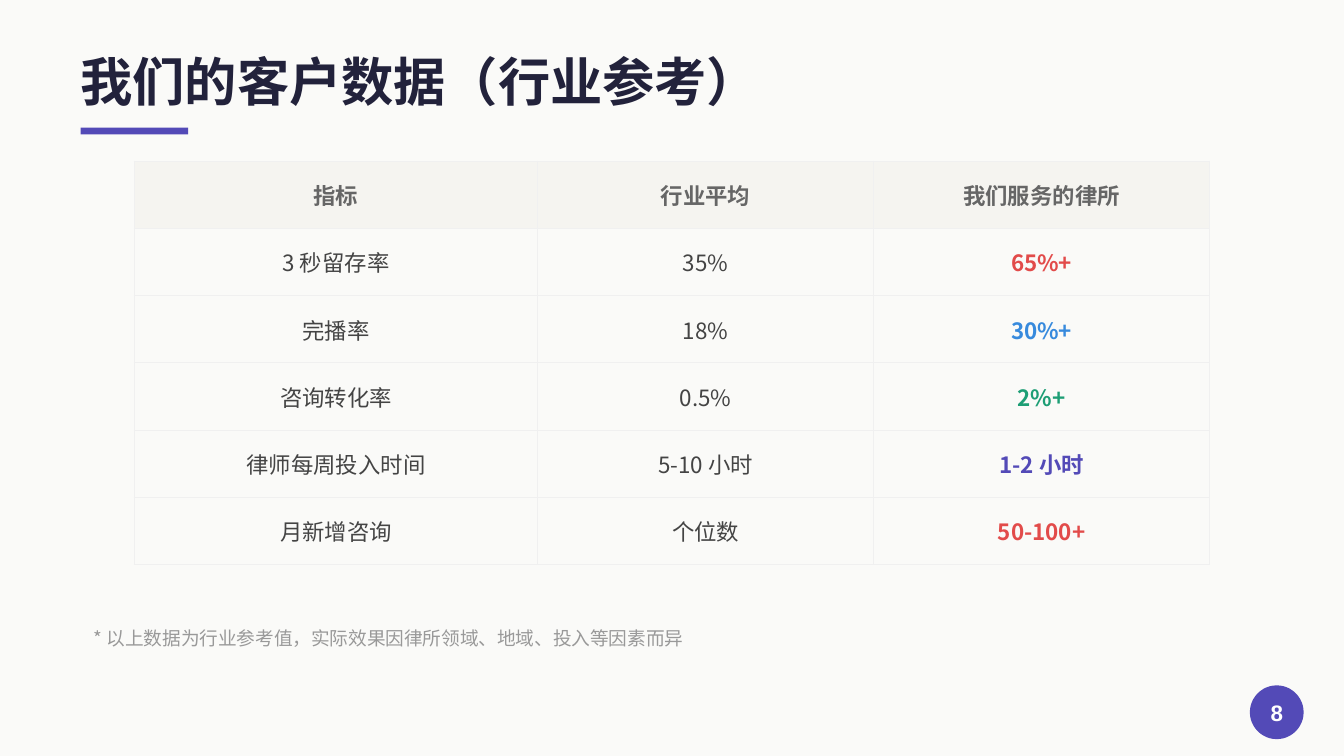
from dataclasses import dataclass
from typing import NamedTuple

from lxml import etree
from pptx import Presentation
from pptx.dml.color import RGBColor
from pptx.enum.shapes import MSO_SHAPE
from pptx.enum.text import MSO_ANCHOR, MSO_AUTO_SIZE, PP_ALIGN
from pptx.oxml.ns import qn
from pptx.util import Pt

RECT, OVAL = MSO_SHAPE.RECTANGLE, MSO_SHAPE.OVAL
MIDDLE = MSO_ANCHOR.MIDDLE
LEFT, CENTER = PP_ALIGN.LEFT, PP_ALIGN.CENTER
NO_FIT = MSO_AUTO_SIZE.NONE


@dataclass(frozen=True)
class Theme:
    paper: str = "FAFAF8"
    ink: str = "22223B"
    accent: str = "534AB7"
    head: str = "666666"
    head_fill: str = "F5F4F0"
    body: str = "444444"
    rule: str = "F0F0F0"
    note: str = "999999"
    white: str = "FFFFFF"
    red: str = "E24B4A"
    blue: str = "378ADD"
    green: str = "1D9E75"
    title_size: float = 28
    text_size: float = 12
    note_size: float = 10
    rule_size: float = 0.5
    font: str = "Noto Sans CJK SC"
    digit: str = "Arial"


class Box(NamedTuple):
    left: float
    top: float
    width: float
    height: float


class Style(NamedTuple):
    size: float
    color: str
    bold: bool
    align: PP_ALIGN
    font: str


class Metric(NamedTuple):
    name: str
    market: str
    ours: str
    color: str


THEME = Theme()
HEADS = ("指标", "行业平均", "我们服务的律所")
METRICS = (
    Metric("3 秒留存率", "35%", "65%+", THEME.red),
    Metric("完播率", "18%", "30%+", THEME.blue),
    Metric("咨询转化率", "0.5%", "2%+", THEME.green),
    Metric("律师每周投入时间", "5-10 小时", "1-2 小时", THEME.accent),
    Metric("月新增咨询", "个位数", "50-100+", THEME.red),
)
WIDTHS = (216, 180, 180)
ROW = 36


def rgb(color: str) -> RGBColor:
    return RGBColor.from_string(color)


def place(box: Box) -> list[Pt]:
    return [Pt(side) for side in box]


def write(frame, text: str, style: Style) -> None:
    frame.text = text
    line = frame.paragraphs[0]
    line.alignment = style.align
    for run in line.runs:
        run.font.name = style.font
        run.font.size = Pt(style.size)
        run.font.bold = style.bold
        run.font.color.rgb = rgb(style.color)
        east = etree.SubElement(run._r.get_or_add_rPr(), qn("a:ea"))
        east.set("typeface", style.font)


def clear(frame) -> None:
    frame.margin_left = frame.margin_right = 0
    frame.margin_top = frame.margin_bottom = 0


def add_title(slide, box: Box, text: str) -> None:
    title = slide.shapes.title
    title.left, title.top, title.width, title.height = place(box)
    frame = title.text_frame
    clear(frame)
    frame.auto_size = NO_FIT
    frame.vertical_anchor = MIDDLE
    write(frame, text, Style(THEME.title_size, THEME.ink, True, LEFT, THEME.font))


def add_solid(slide, kind: MSO_SHAPE, box: Box):
    shape = slide.shapes.add_shape(kind, *place(box))
    shape.shadow.inherit = False
    shape.fill.solid()
    shape.fill.fore_color.rgb = rgb(THEME.accent)
    shape.line.fill.background()
    return shape


def add_badge(slide, box: Box, text: str) -> None:
    frame = add_solid(slide, OVAL, box).text_frame
    clear(frame)
    frame.vertical_anchor = MIDDLE
    write(frame, text, Style(THEME.text_size, THEME.white, True, CENTER, THEME.digit))


def add_note(slide, box: Box, text: str) -> None:
    frame = slide.shapes.add_textbox(*place(box)).text_frame
    frame.word_wrap = True
    frame.vertical_anchor = MIDDLE
    write(frame, text, Style(THEME.note_size, THEME.note, False, LEFT, THEME.font))


def add_rules(cell) -> None:
    props = cell._tc.get_or_add_tcPr()
    for side in ("a:lnL", "a:lnR", "a:lnT", "a:lnB"):
        line = etree.SubElement(props, qn(side), w=str(Pt(THEME.rule_size)))
        fill = etree.SubElement(line, qn("a:solidFill"))
        etree.SubElement(fill, qn("a:srgbClr"), val=THEME.rule)


def fill_cell(cell, text: str, color: str, bold: bool, fill: str | None) -> None:
    add_rules(cell)
    if fill:
        cell.fill.solid()
        cell.fill.fore_color.rgb = rgb(fill)
    else:
        cell.fill.background()
    cell.vertical_anchor = MIDDLE
    write(cell.text_frame, text, Style(THEME.text_size, color, bold, CENTER, THEME.font))


def add_grid(slide, left: float, top: float) -> None:
    count = len(METRICS) + 1
    box = Box(left, top, sum(WIDTHS), count * ROW)
    table = slide.shapes.add_table(count, len(WIDTHS), *place(box)).table
    table.first_row = table.horz_banding = False
    for column, width in zip(table.columns, WIDTHS):
        column.width = Pt(width)
    for cell, text in zip(table.rows[0].cells, HEADS):
        fill_cell(cell, text, THEME.head, True, THEME.head_fill)
    for index, metric in enumerate(METRICS, 1):
        name, market, ours = table.rows[index].cells
        fill_cell(name, metric.name, THEME.body, False, None)
        fill_cell(market, metric.market, THEME.body, False, None)
        fill_cell(ours, metric.ours, metric.color, True, None)


def main() -> None:
    deck = Presentation()
    deck.slide_width, deck.slide_height = Pt(720), Pt(405)
    slide = deck.slides.add_slide(deck.slide_layouts.get_by_name("Title Only"))
    back = slide.background.fill
    back.solid()
    back.fore_color.rgb = rgb(THEME.paper)
    add_title(slide, Box(43.2, 21.6, 604.8, 43.2), "我们的客户数据（行业参考）")
    add_solid(slide, RECT, Box(43.2, 68.4, 57.6, 3.6))
    add_badge(slide, Box(669.6, 367.2, 28.8, 28.8), "8")
    add_grid(slide, 72, 86.4)
    add_note(
        slide,
        Box(43.2, 331.2, 633.6, 21.6),
        "* 以上数据为行业参考值，实际效果因律所领域、地域、投入等因素而异",
    )
    deck.save("out.pptx")


if __name__ == "__main__":
    main()
